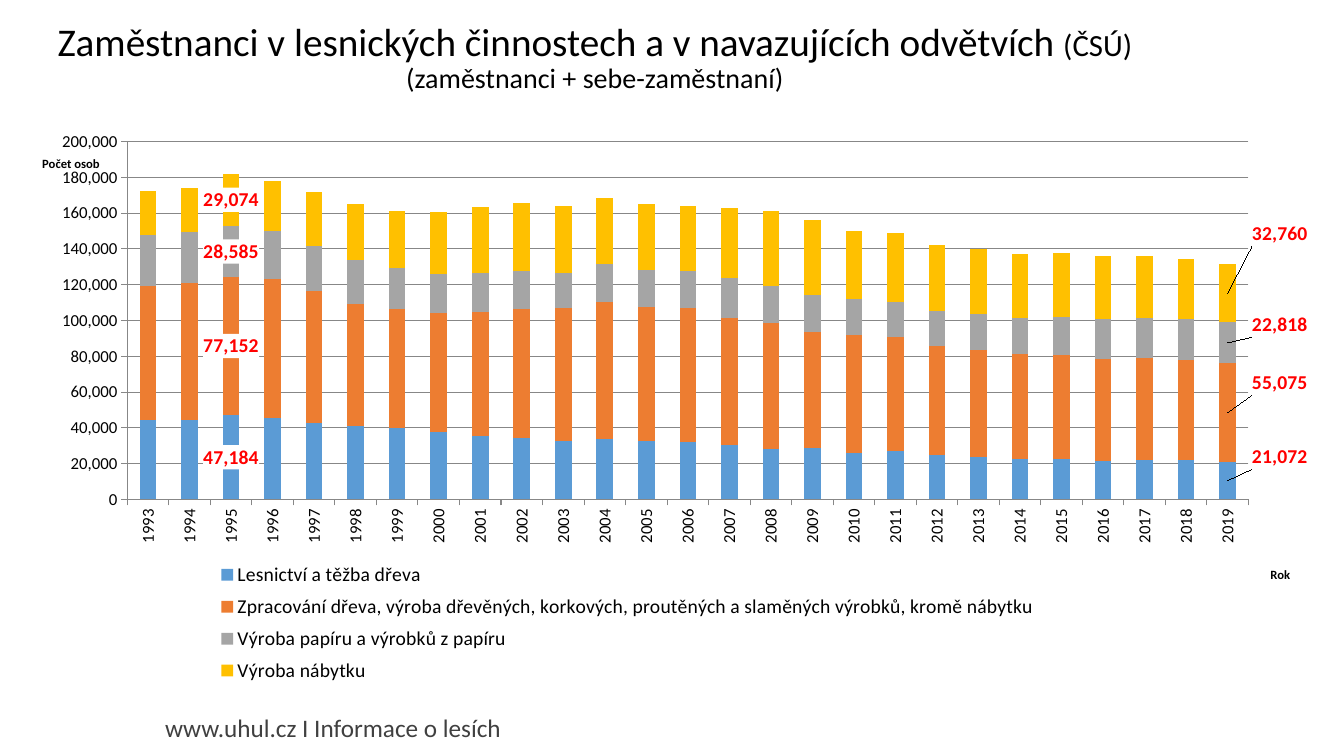
from dataclasses import dataclass

from lxml.etree import SubElement
from pptx import Presentation
from pptx.chart.data import CategoryChartData
from pptx.dml.color import RGBColor
from pptx.enum.chart import XL_CHART_TYPE, XL_LABEL_POSITION, XL_LEGEND_POSITION, XL_TICK_MARK
from pptx.enum.text import MSO_ANCHOR, PP_ALIGN
from pptx.oxml import parse_xml
from pptx.oxml.ns import nsdecls, qn
from pptx.util import Inches, Pt

FONT = "Calibri"
BLACK, RED, GRID_GRAY = "000000", "FF0000", "878787"
YEARS = range(1993, 2020)
PEAK_YEAR, LAST_YEAR = 1995, 2019
LEADER_LINES = f"""<c:extLst {nsdecls('c')}>
<c:ext uri="{{CE6537A1-D6FC-4f65-9D91-7224C49458BB}}"
 xmlns:c15="http://schemas.microsoft.com/office/drawing/2012/chart">
<c15:showLeaderLines val="1"/>
<c15:leaderLines><c:spPr><a:ln w="9525" {nsdecls('a')}>
<a:solidFill><a:srgbClr val="{BLACK}"/></a:solidFill></a:ln></c:spPr></c15:leaderLines>
</c:ext></c:extLst>"""
WHITE_FILL = f"""<c:spPr {nsdecls('c', 'a')}>
<a:solidFill><a:srgbClr val="FFFFFF"/></a:solidFill></c:spPr>"""


@dataclass
class Industry:
    """One stacked series; the offset moves its last label, as chart fractions."""
    name: str
    color: str
    label_offset: tuple[float, float]
    employees: list[int]


INDUSTRIES = [
    Industry("Lesnictví a těžba dřeva", "5B9BD5", (0.04, -0.04), [
        44186, 44629, 47184, 45628, 42896, 40936, 40111, 37657, 35707,
        34338, 32815, 33563, 32526, 32185, 30446, 28283, 28857, 25961,
        26834, 24642, 23494, 22606, 22620, 21502, 21867, 21825, 21072]),
    Industry("Zpracování dřeva, výroba dřevěných, korkových, proutěných "
             "a slaměných výrobků, kromě nábytku", "ED7D31", (0.04, -0.05), [
                 75121, 76118, 77152, 77844, 73770, 68449, 66282, 66545, 68885,
                 71919, 74157, 76916, 74837, 74617, 70855, 70591, 64668, 66244,
                 63984, 60915, 59984, 58668, 57942, 57249, 57149, 56268, 55075]),
    Industry("Výroba papíru a výrobků z papíru", "A5A5A5", (0.04, -0.03), [
        28597, 28523, 28585, 26747, 25082, 24650, 22997, 21838, 21758,
        21471, 19849, 20913, 20723, 20786, 22435, 20546, 20571, 19812,
        19766, 19996, 20261, 20313, 21465, 21974, 22637, 22931, 22818]),
    Industry("Výroba nábytku", "FFC000", (0.04, -0.1), [
        24628, 24845, 29074, 27812, 30212, 31255, 31687, 34853, 36987,
        37872, 36903, 37130, 37110, 36193, 39174, 41705, 42287, 37976,
        38501, 36813, 36248, 35599, 35664, 35493, 34636, 33567, 32760]),
]


def format_font(font, size: float, color: str = BLACK, bold: bool = False) -> None:
    font.name = FONT
    font.size = Pt(size)
    font.bold = bold
    font.color.rgb = RGBColor.from_string(color)


def manual_layout(**settings):
    """Build a c:layout element from its settings, given in schema order."""
    parts = "".join(f'<c:{key} val="{value}"/>' for key, value in settings.items())
    return parse_xml(f"<c:layout {nsdecls('c')}><c:manualLayout>{parts}"
                     "</c:manualLayout></c:layout>")


def place(parent, before: tuple[str, ...], **settings) -> None:
    """Replace the layout of a chart part, ahead of the first of the named children."""
    for old_layout in parent.findall(qn("c:layout")):
        parent.remove(old_layout)
    layout = manual_layout(**settings)
    follower = next((child for child in parent if child.tag in map(qn, before)), None)
    if follower is None:
        parent.append(layout)
    else:
        follower.addprevious(layout)


def add_axis_title(axis, text: str, left: float, top: float) -> None:
    title = axis.axis_title
    title.text_frame.text = text
    format_font(title.text_frame.paragraphs[0].runs[0].font, 9, bold=True)
    body = title._element.find(f".//{qn('a:bodyPr')}")
    body.set("rot", "0")
    body.set("vert", "horz")
    place(title._element, ("c:overlay", "c:spPr", "c:txPr"),
          xMode="edge", yMode="edge", x=left, y=top)


def format_axis(axis) -> None:
    axis.major_tick_mark = XL_TICK_MARK.OUTSIDE
    axis.minor_tick_mark = XL_TICK_MARK.NONE
    axis.format.line.color.rgb = RGBColor.from_string(GRID_GRAY)
    format_font(axis.tick_labels.font, 12)


def add_point_label(series, year: int):
    label = series.points[YEARS.index(year)].data_label
    format_font(label.font, 14, RED, bold=True)
    label.position = XL_LABEL_POSITION.CENTER
    return label._dLbl


def format_series(series, industry: Industry) -> None:
    series.format.fill.solid()
    series.format.fill.fore_color.rgb = RGBColor.from_string(industry.color)
    labels = series.data_labels
    labels.show_value = False
    peak_label = add_point_label(series, PEAK_YEAR)
    peak_label.find(qn("c:txPr")).addprevious(parse_xml(WHITE_FILL))
    last_label = add_point_label(series, LAST_YEAR)
    x, y = industry.label_offset
    place(last_label, ("c:txPr",), x=x, y=y)
    labels._element.append(parse_xml(LEADER_LINES))


def add_employment_chart(slide) -> None:
    data = CategoryChartData(number_format="#,##0")
    data.categories = [str(year) for year in YEARS]
    for industry in INDUSTRIES:
        data.add_series(industry.name, industry.employees)
    chart = slide.shapes.add_chart(
        XL_CHART_TYPE.COLUMN_STACKED, Inches(0.2), Inches(1.06),
        Inches(12.96), Inches(5.85), data).chart
    chart.has_title = False
    format_font(chart.font, 10)
    plot = chart.plots[0]
    plot.gap_width = 150
    plot.overlap = 100
    for series, industry in zip(plot.series, INDUSTRIES):
        format_series(series, industry)
    place(chart._chartSpace.chart.plotArea, ("c:barChart",), layoutTarget="inner",
          xMode="edge", yMode="edge", x=0.082, y=0.059, w=0.858, h=0.607)

    years, persons = chart.category_axis, chart.value_axis
    for axis in (years, persons):
        format_axis(axis)
    years.tick_labels.font._element.getparent().getparent().getparent().find(
        qn("a:bodyPr")).set("rot", "-5400000")
    persons.minimum_scale, persons.maximum_scale, persons.major_unit = 0, 200000, 20000
    persons.tick_labels.number_format = "#,##0"
    persons.tick_labels.number_format_is_linked = False
    persons.major_gridlines.format.line.color.rgb = RGBColor.from_string(GRID_GRAY)
    add_axis_title(years, "Rok", 0.955, 0.775)
    add_axis_title(persons, "Počet osob", 0.015, 0.078)

    chart.has_legend = True
    legend = chart.legend
    legend.position = XL_LEGEND_POSITION.BOTTOM
    legend.include_in_layout = False
    format_font(legend.font, 14)
    place(legend._element, ("c:overlay", "c:spPr", "c:txPr"),
          xMode="edge", yMode="edge", x=0.125, y=0.76, w=0.68, h=0.23)


def format_title(title) -> None:
    title.left, title.top = Inches(0), Inches(0.09)
    title.width, title.height = Inches(11.8), Inches(0.98)
    title.text_frame.vertical_anchor = MSO_ANCHOR.MIDDLE
    paragraph = title.text_frame.paragraphs[0]
    paragraph.alignment = PP_ALIGN.CENTER
    paragraph.line_spacing = 0.9
    for text, size in (
            ("Zaměstnanci v lesnických činnostech a v navazujících odvětvích ", 28),
            ("(ČSÚ)", 22),
            ("(zaměstnanci + sebe-zaměstnaní)", 20)):
        if size == 20:
            paragraph.add_line_break()
            line_break = paragraph._p.find(qn("a:br"))
            SubElement(line_break, qn("a:rPr"), sz="2200")
        run = paragraph.add_run()
        run.text = text
        format_font(run.font, size)


def add_footer(slide) -> None:
    footer = slide.shapes.add_textbox(Inches(1.54), Inches(7.05), Inches(6.23), Inches(0.4))
    footer.text_frame.word_wrap = True
    paragraph = footer.text_frame.paragraphs[0]
    paragraph.text = "www.uhul.cz I Informace o lesích"
    paragraph.line_spacing = 0.9
    format_font(paragraph.runs[0].font, 18, "404040")


def main() -> None:
    presentation = Presentation()
    presentation.slide_width, presentation.slide_height = Inches(13.33), Inches(7.5)
    slide = presentation.slides.add_slide(presentation.slide_layouts.get_by_name("Title Only"))
    add_footer(slide)
    format_title(slide.shapes.title)
    add_employment_chart(slide)
    presentation.save("out.pptx")


if __name__ == "__main__":
    main()
